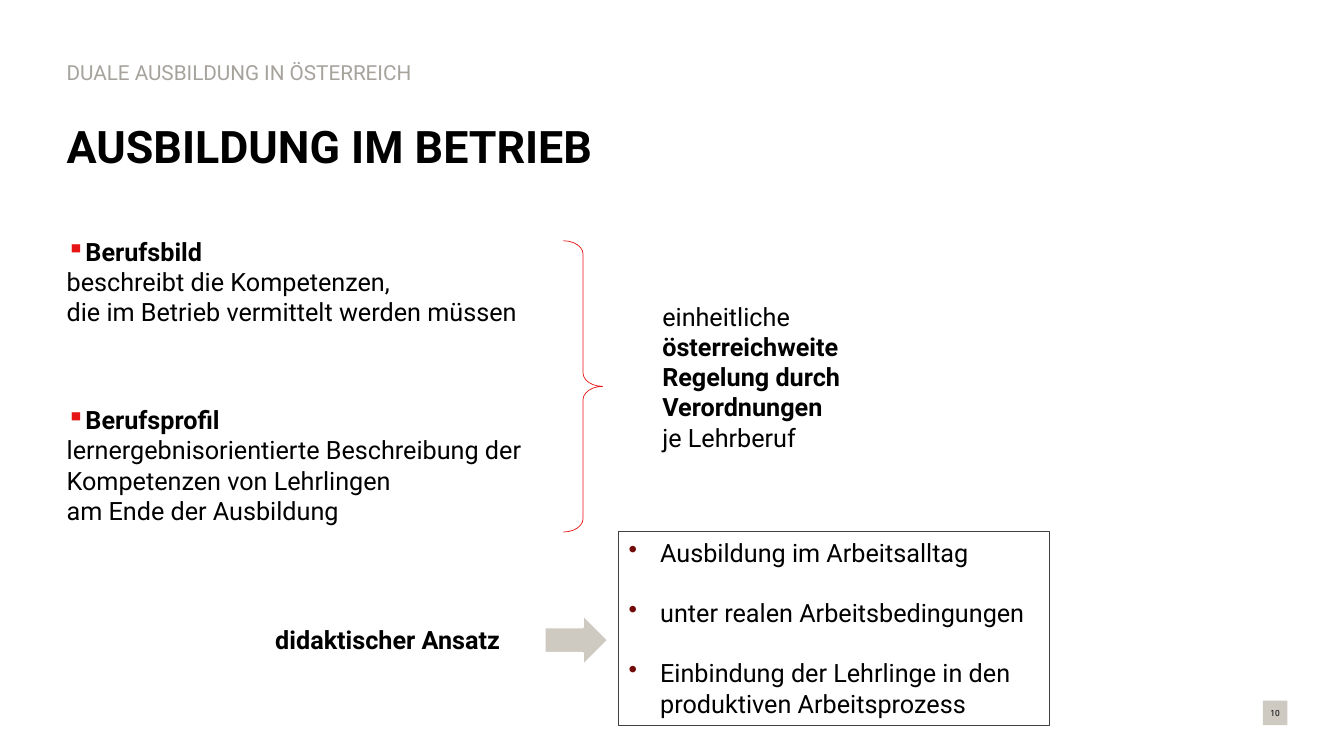
from dataclasses import dataclass

from lxml import etree
from pptx import Presentation
from pptx import util as u
from pptx.dml.color import RGBColor
from pptx.enum import shapes, text
from pptx.oxml import ns

Pt = u.Pt


@dataclass(frozen=True)
class Theme:
    font: str = "Roboto"
    ink: str = "000000"
    gray: str = "A6A39D"
    sand: str = "CECAC2"
    red: str = "E61414"
    dark: str = "730A0A"
    frame: str = "404040"
    white: str = "FFFFFF"
    head: float = 32
    body: float = 18
    kick: float = 14.8
    tiny: float = 6


THEME = Theme()


def rgb(code):
    return RGBColor.from_string(code)


def mark(para, char, color, hang):
    """Give a paragraph a coloured bullet with a hanging indent."""
    props = para._p.get_or_add_pPr()
    props.set("marL", str(Pt(hang)))
    props.set("indent", str(-Pt(hang)))
    tint = etree.SubElement(props, ns.qn("a:buClr"))
    etree.SubElement(tint, ns.qn("a:srgbClr"), val=color)
    etree.SubElement(props, ns.qn("a:buChar"), char=char)


def write(shape, paras, size=THEME.body, color=THEME.ink, align="LEFT",
          anchor="TOP", wrap=True, lead=None, gap=0, bullet=None):
    """Fill a shape; each paragraph is a list of (line, bold) pairs."""
    frame = shape.text_frame
    frame.word_wrap = wrap
    frame.vertical_anchor = text.MSO_ANCHOR[anchor]
    for i, lines in enumerate(paras):
        para = frame.add_paragraph() if i else frame.paragraphs[0]
        if bullet:
            mark(para, *bullet)
        para.alignment = text.PP_ALIGN[align]
        if lead:
            para.line_spacing = lead
        if i and gap:
            para.space_before = Pt(gap)
        for j, (line, bold) in enumerate(lines):
            if j:
                para.add_line_break()
            run = para.add_run()
            run.text = line
            font = run.font
            font.name, font.size, font.bold = THEME.font, Pt(size), bold
            font.color.rgb = rgb(color)


def label(slide, box, paras, **style):
    area = slide.shapes.add_textbox(*map(Pt, box))
    write(area, paras, **style)


def draw(slide, kind, box, fill=None, line=None, width=1):
    shape = slide.shapes.add_shape(shapes.MSO_SHAPE[kind], *map(Pt, box))
    shape.shadow.inherit = False
    if fill:
        shape.fill.solid()
        shape.fill.fore_color.rgb = rgb(fill)
    else:
        shape.fill.background()
    if line:
        shape.line.color.rgb = rgb(line)
        shape.line.width = Pt(width)
    else:
        shape.line.fill.background()
    return shape


def header(slide, x, y, w):
    label(slide, (x, y, w / 2, 24), [[("DUALE AUSBILDUNG IN ÖSTERREICH", False)]],
          size=THEME.kick, color=THEME.gray, anchor="MIDDLE", lead=0.9)
    label(slide, (x, y + 24, w, 83.5), [[("AUSBILDUNG IM BETRIEB", True)]],
          size=THEME.head, anchor="MIDDLE", lead=0.9)


def rules(slide, x, y, w, h):
    """Place both documents, the brace and the regulation they share."""
    label(slide, (x, y, w, h), [
        [("Berufsbild", True),
         ("beschreibt die Kompetenzen,", False),
         ("die im Betrieb vermittelt werden müssen", False)],
        [("Berufsprofil", True),
         ("lernergebnisorientierte Beschreibung der", False),
         ("Kompetenzen von Lehrlingen", False),
         ("am Ende der Ausbildung", False)],
    ], gap=55.5, bullet=("▪", THEME.red, 0))
    brace = draw(slide, "RIGHT_BRACE", (x + 362, y + 7, 28, 208),
                 line=THEME.red, width=0.5)
    brace.adjustments[0] = 0.34
    label(slide, (x + 425.5, y + 46.5, 181.5, 117), [
        [("einheitliche", False)],
        [("österreichweite", True)],
        [("Regelung durch", True)],
        [("Verordnungen", True)],
        [("je Lehrberuf", False)],
    ])


def method(slide, x, y, w, h):
    """Place the approach, its arrow and the framed list of features."""
    label(slide, (x, y + 62.5, 181, 29), [[("didaktischer Ansatz", True)]],
          wrap=False)
    draw(slide, "RIGHT_ARROW", (x + 199.5, y + 59, 45.5, 36.5),
         fill=THEME.sand, line=THEME.white, width=1.5)
    left = 252.5
    panel = draw(slide, "RECTANGLE", (x + left, y, w - left, h),
                 line=THEME.frame, width=0.75)
    points = ("Ausbildung im Arbeitsalltag", "unter realen Arbeitsbedingungen",
              "Einbindung der Lehrlinge in den produktiven Arbeitsprozess")
    write(panel, [[(point, False)] for point in points],
          gap=21.5, bullet=("•", THEME.dark, 22.5))


def footer(slide, x, y, side):
    draw(slide, "RECTANGLE", (x, y, side, side), fill=THEME.sand)
    pad = 5.5
    label(slide, (x - pad, y - pad, side + 2 * pad, side + 2 * pad),
          [[("10", False)]], size=THEME.tiny, align="CENTER", anchor="MIDDLE")


def main():
    deck = Presentation()
    deck.slide_width, deck.slide_height = Pt(960), Pt(540)
    slide = deck.slides.add_slide(deck.slide_layouts[6])
    header(slide, 40.5, 40.5, 878)
    rules(slide, 40.5, 165, 439, 326)
    method(slide, 189.5, 380, 560, 138)
    footer(slide, 902, 500.5, 17.5)
    deck.save("out.pptx")


if __name__ == "__main__":
    main()
